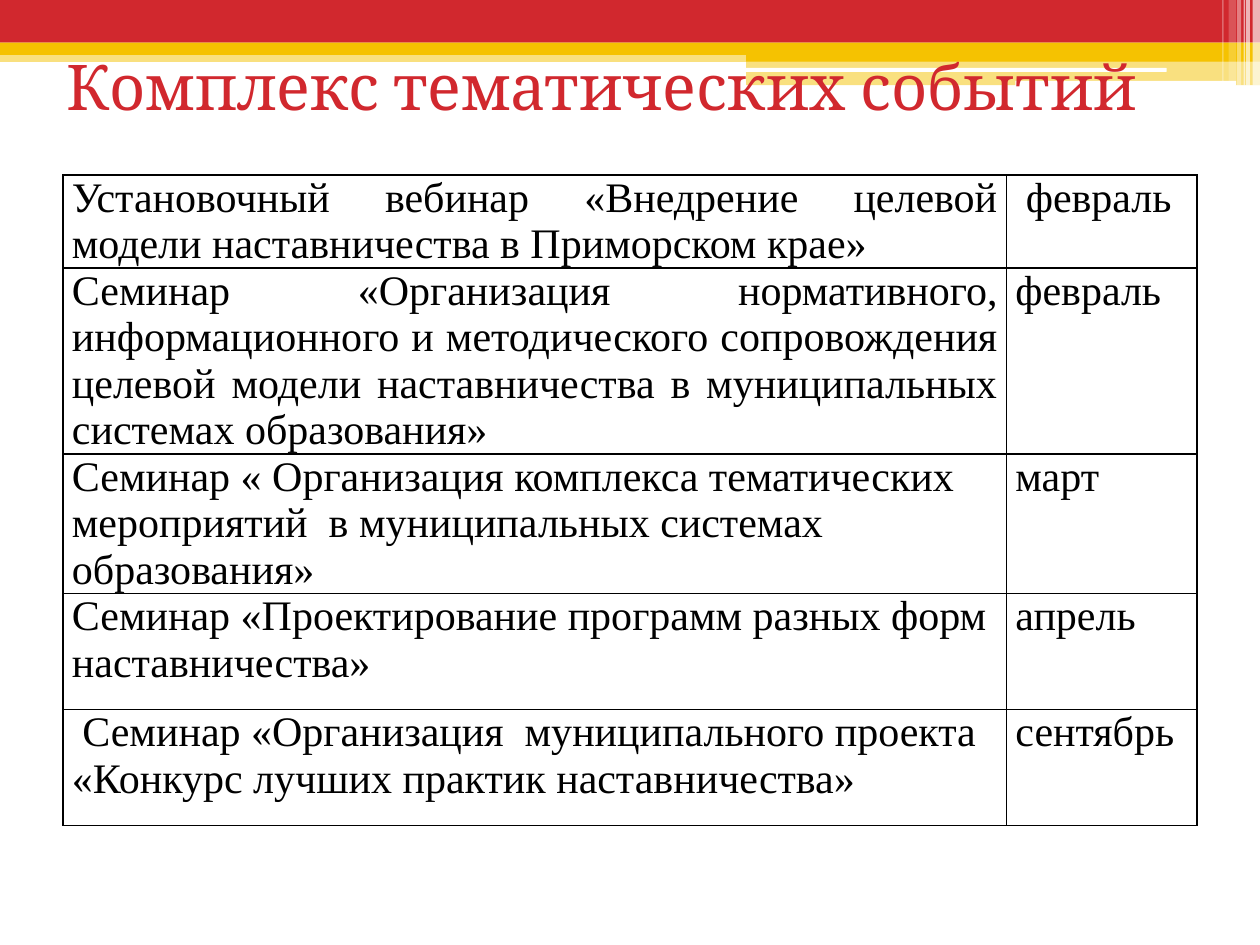
"""Build a slide that lists the thematic mentoring events and their months."""
from dataclasses import dataclass

from lxml.etree import SubElement
from pptx import Presentation
from pptx.dml.color import RGBColor
from pptx.enum.shapes import MSO_SHAPE
from pptx.enum.text import MSO_ANCHOR, MSO_AUTO_SIZE, PP_ALIGN
from pptx.oxml.ns import qn
from pptx.slide import Slide
from pptx.table import _Cell
from pptx.util import Cm, Pt


@dataclass(frozen=True)
class Theme:
    red: str = "D1282E"
    gold: str = "F5C201"
    white: str = "FFFFFF"
    black: str = "000000"
    title_font: str = "Cambria"
    table_font: str = "Times New Roman"
    title_size: int = 36
    table_size: int = 24
    border_width: int = 1


@dataclass(frozen=True)
class Band:
    left: float
    top: float
    width: float
    height: float
    color: str
    opacity: int = 100
    rounded: bool = False


@dataclass(frozen=True)
class Event:
    name: str
    month: str
    height: float
    justified: bool = False


THEME = Theme()

BANDS = [
    Band(0, 1.02, 25.4, 0.23, THEME.gold, 50),
    Band(0, 0, 25.4, 0.86, THEME.red),
    Band(0, 0.86, 25.4, 0.25, THEME.gold),
    Band(15.04, 0.99, 10.36, 0.25, THEME.gold),
    Band(15.04, 1.22, 10.36, 0.5, THEME.gold, 50),
    Band(15.01, 1.37, 8.51, 0.08, THEME.white, rounded=True),
    Band(20.47, 1.63, 4.45, 0.1, THEME.white, rounded=True),
    Band(25.25, 0, 0.15, 1.73, THEME.white, 65),
    Band(25.12, 0, 0.08, 1.73, THEME.white, 65),
    Band(25.07, 0, 0.03, 1.73, THEME.white, 60),
    Band(24.94, 0, 0.08, 1.73, THEME.white, 40),
    Band(24.77, 0, 0.15, 1.63, THEME.white, 20),
    Band(24.64, 0, 0.03, 1.63, THEME.white, 30),
]

EVENTS = [
    Event("Установочный вебинар «Внедрение целевой модели наставничества в Приморском крае»",
          " февраль", 1.85, True),
    Event("Семинар «Организация нормативного, информационного и методического сопровождения "
          "целевой модели наставничества в муниципальных системах образования»",
          "февраль", 3.75, True),
    Event("Семинар « Организация комплекса тематических мероприятий  "
          "в муниципальных системах образования»", "март", 2.8),
    Event("Семинар «Проектирование программ разных форм наставничества»", "апрель", 2.34),
    Event(" Семинар «Организация  муниципального проекта "
          "«Конкурс лучших практик наставничества»", "сентябрь", 2.34),
]

COLUMN_WIDTHS = (19.02, 3.84)


def draw_band(page: Slide, band: Band) -> None:
    """Draw one decorative strip of the header."""
    kind = MSO_SHAPE.ROUNDED_RECTANGLE if band.rounded else MSO_SHAPE.RECTANGLE
    shape = page.shapes.add_shape(
        kind, Cm(band.left), Cm(band.top), Cm(band.width), Cm(band.height))
    shape.shadow.inherit = False
    shape.fill.solid()
    shape.fill.fore_color.rgb = RGBColor.from_string(band.color)
    shape.line.fill.background()
    if band.opacity < 100:
        color = shape._element.spPr.find(f"{qn('a:solidFill')}/{qn('a:srgbClr')}")
        SubElement(color, qn("a:alpha"), val=str(band.opacity * 1000))


def add_span(para, text: str, font: str, size: int, color: str) -> None:
    """Append one formatted run to a paragraph."""
    span = para.add_run()
    span.text = text
    span.font.name = font
    span.font.size = Pt(size)
    span.font.color.rgb = RGBColor.from_string(color)


def draw_title(page: Slide, text: str) -> None:
    """Place the title in front of the header strips."""
    title = page.shapes.title
    title.left, title.top, title.width, title.height = Cm(1.09), Cm(1.12), Cm(22.86), Cm(1.19)
    page.shapes._spTree.append(title._element)
    frame = title.text_frame
    frame.word_wrap = True
    frame.auto_size = MSO_AUTO_SIZE.NONE
    frame.vertical_anchor = MSO_ANCHOR.MIDDLE
    para = frame.paragraphs[0]
    para.alignment = PP_ALIGN.LEFT
    add_span(para, text, THEME.title_font, THEME.title_size, THEME.red)


def border_cell(cell: _Cell) -> None:
    """Give a cell thin lines on all four sides."""
    properties = cell._tc.get_or_add_tcPr()
    for side in ("lnL", "lnR", "lnT", "lnB"):
        line = SubElement(properties, qn(f"a:{side}"), w=str(Pt(THEME.border_width)))
        fill = SubElement(line, qn("a:solidFill"))
        SubElement(fill, qn("a:srgbClr"), val=THEME.black)


def fill_cell(cell: _Cell, text: str, justified: bool) -> None:
    """Format one table cell and write its text."""
    border_cell(cell)
    cell.fill.background()
    cell.margin_left = cell.margin_right = Cm(0.18)
    cell.margin_top = cell.margin_bottom = 0
    para = cell.text_frame.paragraphs[0]
    para.alignment = PP_ALIGN.JUSTIFY if justified else PP_ALIGN.LEFT
    para.space_after = Pt(0 if justified else 6)
    add_span(para, text, THEME.table_font, THEME.table_size, THEME.black)


def draw_events(page: Slide, events: list[Event]) -> None:
    """Draw the table of events and months."""
    height = sum(event.height for event in events)
    table = page.shapes.add_table(
        len(events), len(COLUMN_WIDTHS), Cm(1.27), Cm(3.53),
        Cm(sum(COLUMN_WIDTHS)), Cm(height)).table
    table.first_row = table.horz_banding = False
    for column, width in zip(table.columns, COLUMN_WIDTHS):
        column.width = Cm(width)
    for row, event in zip(table.rows, events):
        row.height = Cm(event.height)
        for cell, text in zip(row.cells, (event.name, event.month)):
            fill_cell(cell, text, event.justified)


def main() -> None:
    """Build and save the deck."""
    deck = Presentation()
    deck.slide_width, deck.slide_height = Cm(25.4), Cm(19.05)
    page = deck.slides.add_slide(deck.slide_layouts.get_by_name("Title Only"))
    for band in BANDS:
        draw_band(page, band)
    draw_title(page, "Комплекс тематических событий")
    draw_events(page, EVENTS)
    deck.save("out.pptx")


if __name__ == "__main__":
    main()
